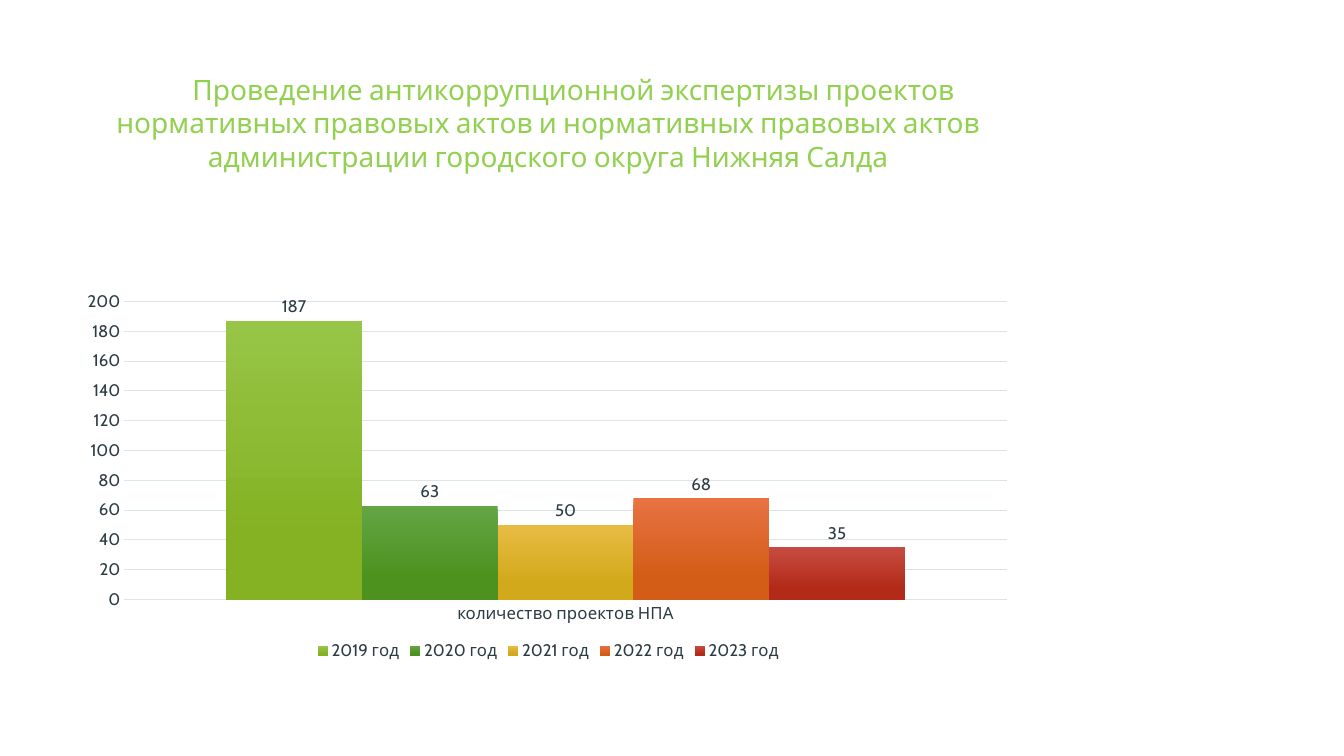
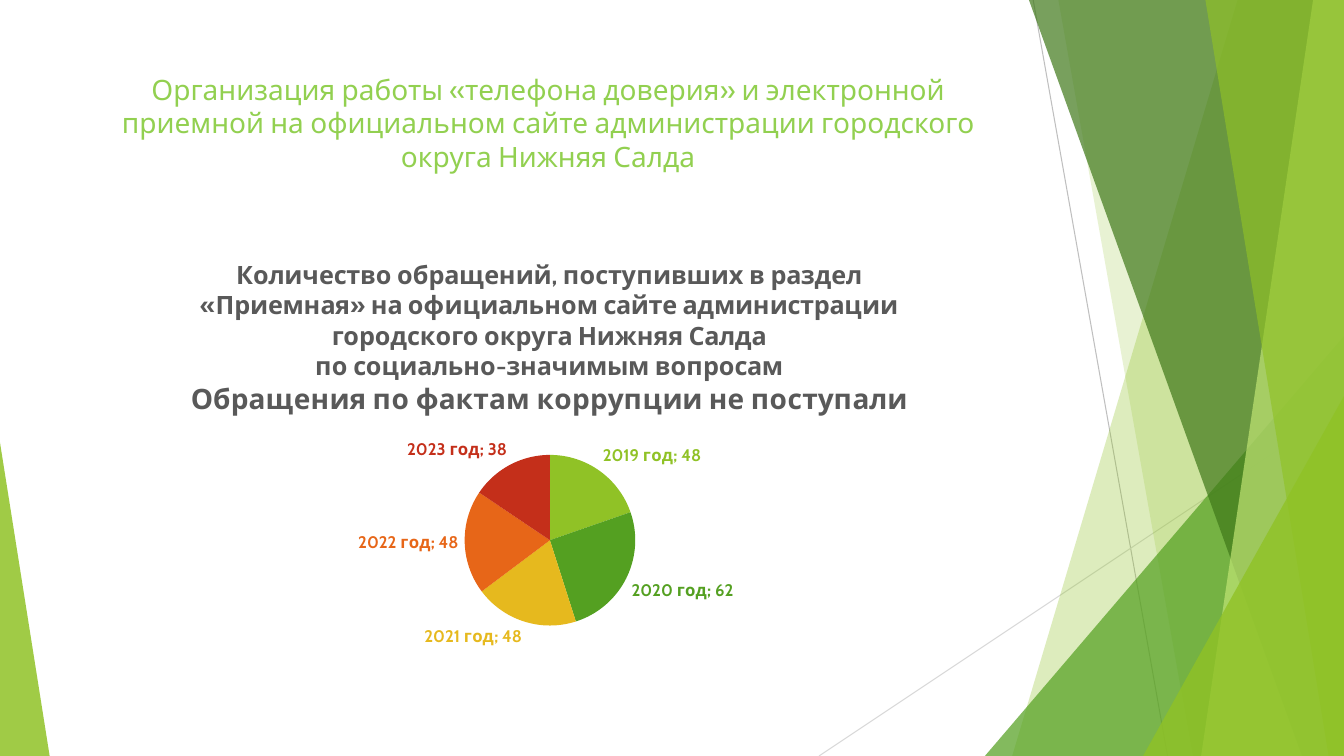
from lxml import etree
from pptx import Presentation
from pptx import util as u
from pptx.chart import data as chart_data
from pptx.dml import color
from pptx.enum import chart as ce
from pptx.enum import shapes, text
from pptx.oxml import ns

COLORS = {
    "title": "92D050", "body": "2C3C43", "heading": "595959", "grid": "DBE4E7",
    "lime": "90C226", "green": "54A021", "forest": "3F7819", "pale": "C0E474",
    "yellow": "E6B91E", "orange": "E76618", "red": "C42F1A",
    "ray": "BFBFBF", "light ray": "D9D9D9",
}
BAR_GRADIENTS = [("97C547", "84B223"), ("63A545", "4D921E"), ("E7BC43", "D2A91B"),
                 ("E87242", "D35D16"), ("C74B42", "B32B18")]
SLICE_COLORS = ["lime", "green", "yellow", "orange", "red"]
YEARS = [f"{year} год" for year in range(2019, 2024)]
WIDTH, HEIGHT = 960, 540
TITLE_BOX = (53, 48, 677, 104)
CHART_BOX = (53, 170, 677, 305)


def rgb(name):
    return color.RGBColor.from_string(COLORS.get(name, name))


def points(values):
    return [u.Pt(value) for value in values]


def place(element, index, target=None, **fractions):
    layout = element.find(ns.qn("c:layout"))
    if layout is not None:
        element.remove(layout)
    layout = etree.Element(ns.qn("c:layout"))
    manual = etree.SubElement(layout, ns.qn("c:manualLayout"))
    settings = {"layoutTarget": target} if target else {}
    settings.update(xMode="edge", yMode="edge", **fractions)
    for tag, value in settings.items():
        etree.SubElement(manual, ns.qn(f"c:{tag}")).set("val", str(value))
    element.insert(index, layout)


class Deck:
    font_name = "Cabin"

    def __init__(self):
        self.presentation = Presentation()
        self.presentation.slide_width = u.Pt(WIDTH)
        self.presentation.slide_height = u.Pt(HEIGHT)
        self.slide = None

    def start(self, title):
        self.slide = self.presentation.slides.add_slide(self.presentation.slide_layouts[6])
        self.title = title

    def style(self, font, size, tint, bold=False):
        font.name = self.font_name
        font.size = u.Pt(size)
        font.bold = bold
        font.color.rgb = rgb(tint)

    def heading(self):
        frame = self.slide.shapes.add_textbox(*points(TITLE_BOX)).text_frame
        frame.word_wrap = True
        frame.vertical_anchor = text.MSO_ANCHOR.TOP
        frame.text = self.title
        paragraph = frame.paragraphs[0]
        paragraph.alignment = text.PP_ALIGN.CENTER
        self.style(paragraph.runs[0].font, 20, "title")

    def ray(self, start, end, tint):
        line = self.slide.shapes.add_connector(
            shapes.MSO_CONNECTOR.STRAIGHT, *points(start + end))
        line.line.color.rgb = rgb(tint)
        line.line.width = u.Pt(0.75)
        etree.SubElement(line._element.spPr, ns.qn("a:effectLst"))

    def paint(self, facet, tint, opacity):
        facet.shadow.inherit = False
        facet.fill.solid()
        facet.fill.fore_color.rgb = rgb(tint)
        facet.line.fill.background()
        clr = facet._element.spPr.find(f".//{ns.qn('a:srgbClr')}")
        etree.SubElement(clr, ns.qn("a:alpha")).set("val", str(opacity * 1000))

    def wedge(self, top, bottom, tint, opacity):
        builder = self.slide.shapes.build_freeform(*points((top, 0)))
        corners = [(WIDTH, 0), (WIDTH, HEIGHT), (bottom, HEIGHT)]
        builder.add_line_segments([points(corner) for corner in corners], close=True)
        self.paint(builder.convert_to_shape(), tint, opacity)

    def triangle(self, left, top, width, apex, tint, opacity):
        facet = self.slide.shapes.add_shape(
            shapes.MSO_SHAPE.ISOSCELES_TRIANGLE, *points((left, top, width, HEIGHT - top)))
        facet.adjustments[0] = apex
        self.paint(facet, tint, opacity)

    def facets(self):
        self.ray((738, 0), (834, HEIGHT), "ray")
        self.ray((WIDTH, 290), (585, HEIGHT), "light ray")
        self.wedge(884, 723, "lime", 30)
        self.wedge(756, 852, "lime", 20)
        self.triangle(703.5, 240, 256.5, 1, "green", 72)
        self.wedge(735, 930, "forest", 70)
        self.wedge(938, 858, "pale", 70)
        self.wedge(861, 949, "lime", 65)
        self.triangle(816.5, 283, 143.5, 1, "lime", 80)
        self.triangle(0, 316, 35.5, 0, "lime", 85)

    def chart(self, kind, categories, series):
        content = chart_data.CategoryChartData()
        content.categories = categories
        for name, values in series:
            content.add_series(name, values)
        chart = self.slide.shapes.add_chart(kind, *points(CHART_BOX), content).chart
        self.style(chart.font, 12, "body")
        chart.has_title = False
        chart.has_legend = False
        return chart

    def columns(self, category, series):
        chart = self.chart(ce.XL_CHART_TYPE.COLUMN_CLUSTERED, [category], series)
        place(chart._chartSpace.chart.plotArea, 0, "inner", x=0.053, y=0.149, w=0.931, h=0.698)
        chart.has_legend = True
        chart.legend.position = ce.XL_LEGEND_POSITION.BOTTOM
        chart.legend.include_in_layout = False
        self.style(chart.legend.font, 12, "body")
        for axis in (chart.category_axis, chart.value_axis):
            axis.major_tick_mark = axis.minor_tick_mark = ce.XL_TICK_MARK.NONE
            self.style(axis.tick_labels.font, 12, "body")
        values = chart.value_axis
        values.minimum_scale, values.maximum_scale, values.major_unit = 0, 200, 20
        values.format.line.fill.background()
        for line in (chart.category_axis.format.line, values.major_gridlines.format.line):
            line.color.rgb = rgb("grid")
            line.width = u.Pt(0.75)
        plot = chart.plots[0]
        plot.gap_width = 150
        plot.overlap = 0
        plot.vary_by_categories = False
        for bar, tints in zip(plot.series, BAR_GRADIENTS):
            bar.invert_if_negative = False
            fill = bar.format.fill
            fill.gradient()
            fill.gradient_angle = 270
            for stop, position, tint in zip(fill.gradient_stops, (0, 0.78), tints):
                stop.position = position
                stop.color.rgb = rgb(tint)
            labels = bar.data_labels
            labels.show_value = True
            labels.position = ce.XL_LABEL_POSITION.OUTSIDE_END
            self.style(labels.font, 12, "body")

    def pie(self, categories, values, caption):
        chart = self.chart(ce.XL_CHART_TYPE.PIE, categories, [("Series 1", values)])
        chart.has_title = True
        frame = chart.chart_title.text_frame
        frame.text = "\n".join(line for line, _ in caption)
        for paragraph, (_, size) in zip(frame.paragraphs, caption):
            paragraph.alignment = text.PP_ALIGN.CENTER
            self.style(paragraph.runs[0].font, size, "heading", True)
        place(chart.chart_title._element, 1, x=0.12, y=0.04)
        place(chart._chartSpace.chart.plotArea, 0, "inner", x=0.412, y=0.508, w=0.18, h=0.4)
        plot = chart.plots[0]
        plot.vary_by_categories = True
        for index, tint in enumerate(SLICE_COLORS):
            point = plot.series[0].points[index]
            point.format.fill.solid()
            point.format.fill.fore_color.rgb = rgb(tint)
            label = point.data_label
            self.style(label.font, 12, tint, True)
            label.position = ce.XL_LABEL_POSITION.OUTSIDE_END
        for label in plot.series[0]._element.iter(ns.qn("c:dLbl")):
            label.find(ns.qn("c:showCatName")).set("val", "1")
            etree.SubElement(label, ns.qn("c:separator")).text = "; "


def main():
    deck = Deck()

    deck.start("\tПроведение антикоррупционной экспертизы проектов нормативных правовых актов "
               "и нормативных правовых актов администрации городского округа Нижняя Салда")
    deck.heading()
    drafts = [187, 63, 50, 68, 35]
    deck.columns("количество проектов НПА", [(year, [count]) for year, count in zip(YEARS, drafts)])

    deck.start("Организация работы «телефона доверия» и электронной приемной "
               "на официальном сайте администрации городского округа Нижняя Салда")
    deck.facets()
    deck.heading()
    deck.pie(YEARS, [48, 62, 48, 48, 38], [
        ("Количество обращений, поступивших в раздел «Приемная» на официальном сайте "
         "администрации городского округа Нижняя Салда", 18),
        ("по социально-значимым вопросам", 18),
        ("Обращения по фактам коррупции не поступали", 20),
    ])

    deck.presentation.save("out.pptx")


if __name__ == "__main__":
    main()
